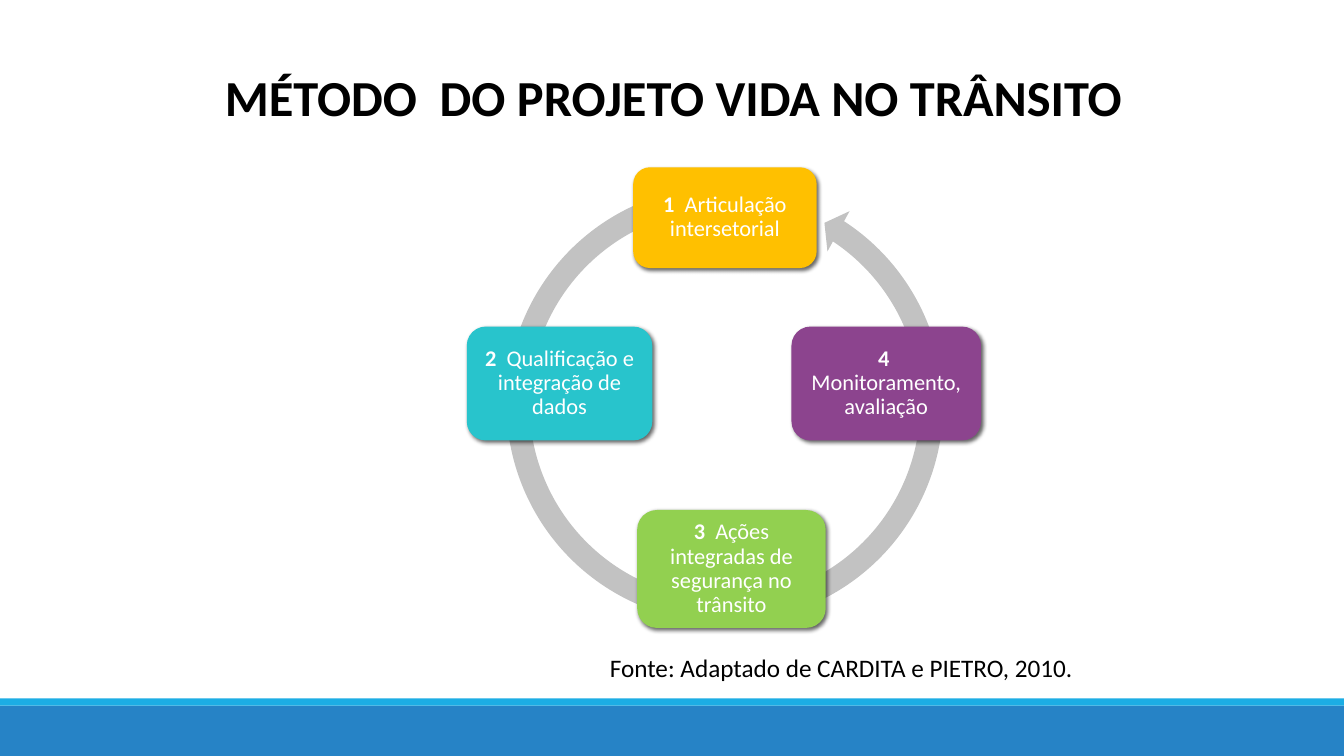
from lxml.etree import SubElement
from pptx import Presentation
from pptx.dml.color import RGBColor
from pptx.enum.shapes import MSO_SHAPE
from pptx.enum.text import MSO_ANCHOR, MSO_AUTO_SIZE, PP_ALIGN
from pptx.oxml.ns import qn
from pptx.util import Inches, Pt


def add_run(p, text, size=16, color="FFFFFF", bold=False):
    r = p.add_run()
    r.text = text
    r.font.name = "Calibri"
    r.font.size = Pt(size)
    r.font.bold = bold
    r.font.color.rgb = RGBColor.from_string(color)


def add_filled(s, kind, box, color):
    sp = s.shapes.add_shape(kind, *[Inches(v) for v in box])
    sp.shadow.inherit = False
    sp.fill.solid()
    sp.fill.fore_color.rgb = RGBColor.from_string(color)
    sp.line.fill.background()
    return sp


prs = Presentation()
prs.slide_width = Inches(13.33)
prs.slide_height = Inches(7.5)
s = prs.slides.add_slide(prs.slide_layouts[5])

add_filled(s, MSO_SHAPE.RECTANGLE, (0, 7, 13.33, 0.5), "2683C6")
add_filled(s, MSO_SHAPE.RECTANGLE, (0, 6.93, 13.33, 0.07), "1CADE4")

title = s.shapes.title
title.left, title.top = Inches(2.07), Inches(0.61)
title.width, title.height = Inches(9.22), Inches(0.71)
tf = title.text_frame
tf.auto_size = MSO_AUTO_SIZE.NONE
tf.vertical_anchor = MSO_ANCHOR.TOP
tf.paragraphs[0].alignment = PP_ALIGN.CENTER
add_run(tf.paragraphs[0], "MÉTODO  DO PROJETO VIDA NO TRÂNSITO", 36, "000000", True)

cycle = add_filled(s, MSO_SHAPE.LEFT_CIRCULAR_ARROW, (4.91, 1.73, 4.56, 4.56), "C2C2C2")
for i, value in enumerate((0.05, 2.73, 181.99, 152.34, 0.05)):
    cycle.adjustments[i] = value

steps = [
    ("Articulação intersetorial", (6.28, 1.66, 1.82, 1), "FFC000"),
    ("Qualificação e integração de dados", (4.63, 3.24, 1.84, 1.13), "28C4CC"),
    ("Ações integradas de segurança no trânsito", (6.32, 5.06, 1.87, 1.17), "92D050"),
    ("Monitoramento, avaliação", (7.85, 3.24, 1.88, 1.13), "8C448E"),
]
for number, (label, box, color) in enumerate(steps, 1):
    sp = add_filled(s, MSO_SHAPE.ROUNDED_RECTANGLE, box, color)
    effects = sp._element.spPr.find(qn("a:effectLst"))
    shadow = SubElement(effects, qn("a:outerShdw"), blurRad=str(Pt(3)), dist=str(Pt(2)),
                        dir=str(45 * 60000), algn="ctr", rotWithShape="0")
    black = SubElement(shadow, qn("a:srgbClr"), val="000000")
    SubElement(black, qn("a:alpha"), val="60000")
    tf = sp.text_frame
    tf.word_wrap = True
    tf.vertical_anchor = MSO_ANCHOR.MIDDLE
    tf.margin_left = tf.margin_right = tf.margin_top = tf.margin_bottom = Inches(0.07)
    p = tf.paragraphs[0]
    p.alignment = PP_ALIGN.CENTER
    p.line_spacing = 0.9
    add_run(p, f"{number}  ", bold=True)
    add_run(p, label)

source = s.shapes.add_textbox(Inches(5.95), Inches(6.42), Inches(4.84), Inches(0.4))
source.text_frame.word_wrap = True
add_run(source.text_frame.paragraphs[0], "Fonte: Adaptado de CARDITA e PIETRO, 2010.", 18, "000000")

prs.save("out.pptx")
